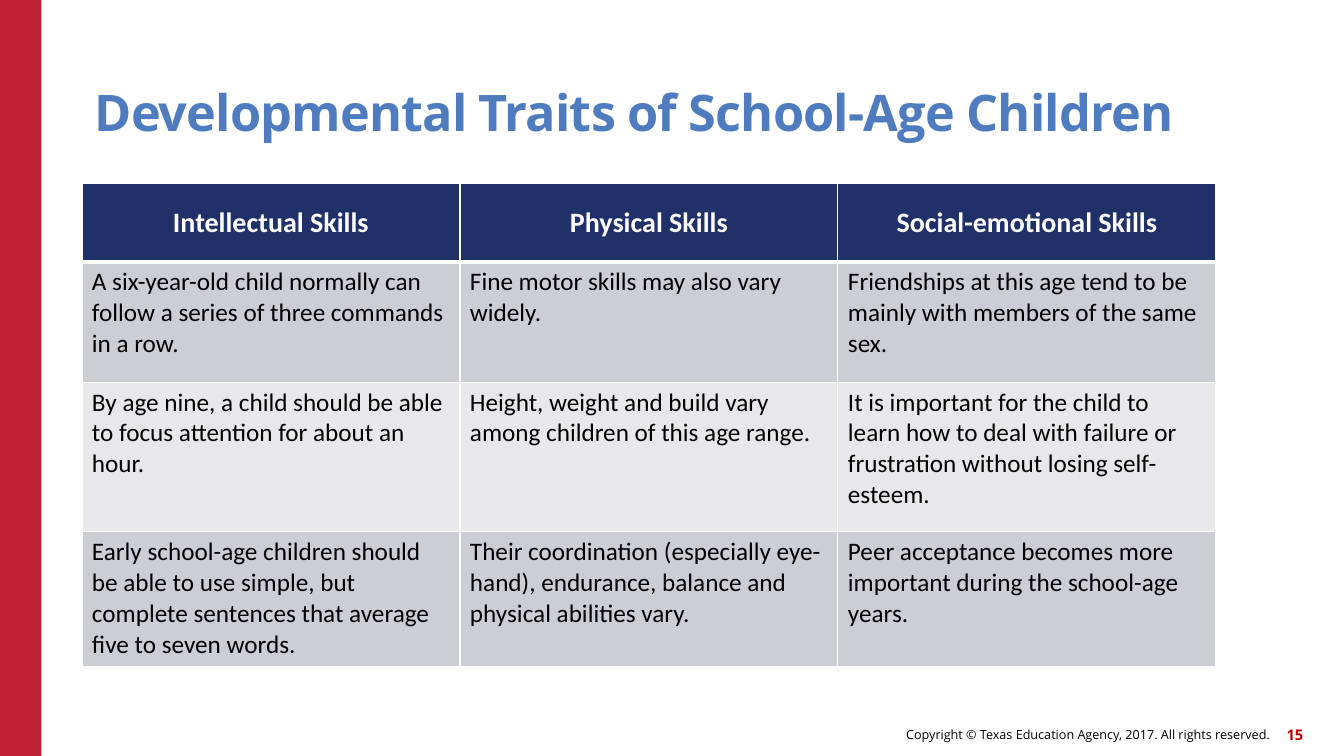
from dataclasses import dataclass

from lxml.etree import SubElement
from pptx import Presentation
from pptx.dml.color import RGBColor
from pptx.enum.shapes import MSO_SHAPE
from pptx.enum.text import MSO_ANCHOR, MSO_AUTO_SIZE, PP_ALIGN
from pptx.oxml.ns import qn
from pptx.util import Pt


@dataclass(frozen=True)
class Theme:
    head: str = "Open Sans"
    body: str = "Calibri"
    white: str = "FFFFFF"
    black: str = "000000"
    red: str = "C02033"
    page: str = "C00000"
    blue: str = "4E7CBE"
    navy: str = "203069"
    bands: tuple = ("CDCDD4", "E8E8EB")
    title: float = 36
    label: float = 20
    text: float = 18
    note: float = 9
    num: float = 10.5


class Deck:
    def __init__(self, theme):
        self.theme = theme
        self.file = Presentation()
        self.file.slide_width, self.file.slide_height = Pt(960), Pt(540)
        self.slide = self.file.slides.add_slide(self.file.slide_layouts[5])

    def style(self, para, face, size, color, bold=False, align=PP_ALIGN.LEFT):
        para.alignment = align
        for run in para.runs:
            font = run.font
            font.name, font.size, font.bold = face, Pt(size), bold
            font.color.rgb = RGBColor.from_string(color)

    def frame(self, shape, text, anchor, left=0):
        frame = shape.text_frame
        frame.text = text
        frame.word_wrap = True
        frame.auto_size = MSO_AUTO_SIZE.NONE
        frame.vertical_anchor = anchor
        frame.margin_left = Pt(left)
        frame.margin_top = frame.margin_right = frame.margin_bottom = 0
        return frame.paragraphs[0]

    def bar(self, x, y, w, h, color):
        bar = self.slide.shapes.add_shape(
            MSO_SHAPE.RECTANGLE, Pt(x), Pt(y), Pt(w), Pt(h))
        bar.shadow.inherit = False
        bar.fill.solid()
        bar.fill.fore_color.rgb = RGBColor.from_string(color)
        bar.line.fill.background()

    def title(self, text, x, y, w, h):
        box = self.slide.shapes.title
        box.left, box.top, box.width, box.height = Pt(x), Pt(y), Pt(w), Pt(h)
        para = self.frame(box, text, MSO_ANCHOR.BOTTOM, left=9)
        para.line_spacing = 0.9
        self.style(para, self.theme.head, self.theme.title, self.theme.blue, True)
        para.runs[0]._r.get_or_add_rPr().set("spc", "-60")

    def note(self, text, x, y, w, h, size, color, bold=False):
        box = self.slide.shapes.add_textbox(Pt(x), Pt(y), Pt(w), Pt(h))
        para = self.frame(box, text, MSO_ANCHOR.MIDDLE)
        self.style(para, self.theme.head, size, color, bold, PP_ALIGN.RIGHT)

    def edge(self, cell, side, width):
        line = SubElement(cell._tc.get_or_add_tcPr(), qn(f"a:ln{side}"),
                          w=str(Pt(width)))
        fill = SubElement(line, qn("a:solidFill"))
        SubElement(fill, qn("a:srgbClr"), val=self.theme.white)

    def cell(self, cell, text, row):
        look = self.theme
        # Borders: a thick rule under the header row
        widths = {"L": 1, "R": 1, "T": 3 if row == 1 else 1,
                  "B": 3 if row == 0 else 1}
        for side, width in widths.items():
            self.edge(cell, side, width)
        cell.fill.solid()
        color = look.bands[(row - 1) % 2] if row else look.navy
        cell.fill.fore_color.rgb = RGBColor.from_string(color)
        # Text
        cell.text_frame.text = text
        para = cell.text_frame.paragraphs[0]
        if row:
            self.style(para, look.body, look.text, look.black)
        else:
            para.line_spacing = 1.5
            self.style(para, look.body, look.label, look.white, True,
                       PP_ALIGN.CENTER)

    def table(self, rows, x, y, width, heights):
        count = len(rows[0])
        table = self.slide.shapes.add_table(
            len(rows), count, Pt(x), Pt(y), Pt(width), Pt(sum(heights))).table
        for col in table.columns:
            col.width = Pt(width / count)
        for r, (texts, height) in enumerate(zip(rows, heights)):
            table.rows[r].height = Pt(height)
            for c, text in enumerate(texts):
                self.cell(table.cell(r, c), text, r)


SKILLS = [
    ("Intellectual Skills", "Physical Skills", "Social-emotional Skills"),
    ("A six-year-old child normally can follow a series of three commands in a row.",
     "Fine motor skills may also vary widely.",
     "Friendships at this age tend to be mainly with members of the same sex."),
    ("By age nine, a child should be able to focus attention for about an hour.",
     "Height, weight and build vary among children of this age range.",
     "It is important for the child to learn how to deal with failure or "
     "frustration without losing self-esteem."),
    ("Early school-age children should be able to use simple, but complete "
     "sentences that average five to seven words.",
     "Their coordination (especially eye-hand), endurance, balance and "
     "physical abilities vary.",
     "Peer acceptance becomes more important during the school-age years."),
]


def main():
    look = Theme()
    deck = Deck(look)
    # Side bar and title
    deck.bar(0, 0, 29.5, 540, look.red)
    deck.title("Developmental Traits of School-Age Children", 58.5, 32.5, 792, 69)
    # Skills table
    deck.table(SKILLS, 58.5, 131, 810, (56, 86, 107, 96.5))
    # Footer
    deck.note("Copyright © Texas Education Agency, 2017. All rights reserved.",
              442, 513, 465, 23, look.note, look.black)
    deck.note("15", 901, 513.5, 30, 23, look.num, look.page, True)
    deck.file.save("out.pptx")


if __name__ == "__main__":
    main()
